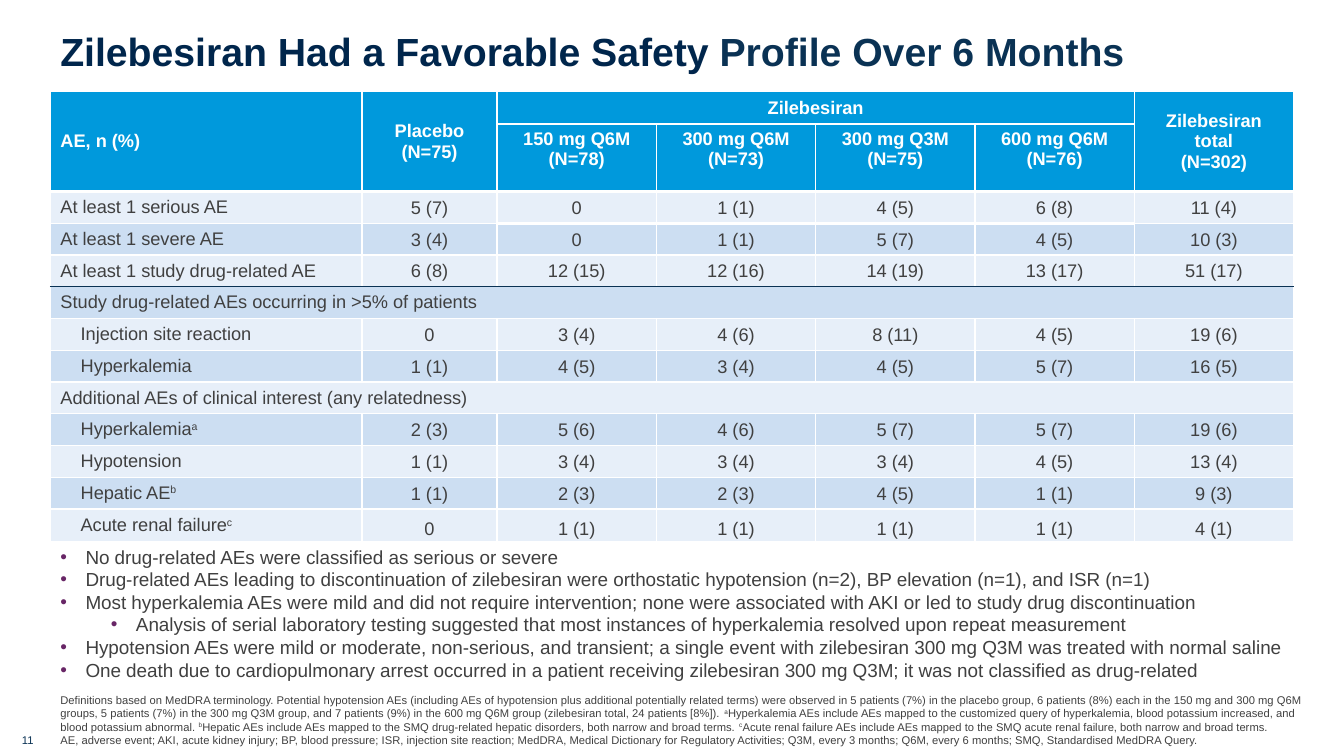
from dataclasses import dataclass, field
from typing import Any

from lxml import etree
from pptx import Presentation
from pptx.dml.color import RGBColor
from pptx.enum.text import MSO_ANCHOR, PP_ALIGN
from pptx.oxml.ns import qn
from pptx.util import Inches, Pt

TOP, MIDDLE, BOTTOM = MSO_ANCHOR.TOP, MSO_ANCHOR.MIDDLE, MSO_ANCHOR.BOTTOM
CENTER = PP_ALIGN.CENTER

NAVY, DARK_NAVY, GRAY, WHITE = "0A3254", "00264C", "404040", "FFFFFF"
HEADER_BLUE, PALE_BLUE, LIGHT_BLUE, PURPLE = "0099DC", "E7EFF9", "CCDEF2", "682666"
DOSE_COLUMNS = range(2, 6)
COLUMN_WIDTHS = [3.09, 1.34] + [1.58] * 5
HEADER_HEIGHTS = [0.32, 0.66]
ROW_HEIGHT = 0.315


@dataclass
class TextStyle:
    size: float
    color: str = GRAY
    bold: bool = False
    paragraph: dict[str, Any] = field(default_factory=dict)


@dataclass
class TextBlock:
    left: float
    top: float
    width: float
    height: float
    paragraphs: list[str]
    style: TextStyle
    anchor: Any = TOP
    bulleted: bool = False


@dataclass
class HeaderCell:
    row: int
    column: int
    lines: list[str]
    row_span: int = 1
    column_span: int = 1


@dataclass
class DataRow:
    label: str
    values: list[str] = field(default_factory=list)
    indented: bool = False


BODY = TextStyle(13)
HEADING = TextStyle(13, WHITE, True)
CENTERED_HEADING = TextStyle(13, WHITE, True, {"alignment": CENTER})
VALUE = TextStyle(13, paragraph={"alignment": CENTER, "line_spacing": 1.07,
                                 "space_after": Pt(1.4)})
LAST_VALUE = TextStyle(13, paragraph={"alignment": CENTER, "line_spacing": 1.5})
BULLET = TextStyle(13.5)

HEADER_CELLS = [
    HeaderCell(0, 0, ["AE, n (%)"], row_span=2),
    HeaderCell(0, 1, ["Placebo", "(N=75)"], row_span=2),
    HeaderCell(0, 2, ["Zilebesiran"], column_span=4),
    HeaderCell(0, 6, ["Zilebesiran", "total", "(N=302)"], row_span=2),
    HeaderCell(1, 2, ["150 mg Q6M (N=78)"]),
    HeaderCell(1, 3, ["300 mg Q6M (N=73)"]),
    HeaderCell(1, 4, ["300 mg Q3M", "(N=75)"]),
    HeaderCell(1, 5, ["600 mg Q6M (N=76)"]),
]

# Text between carets is superscript
DATA_ROWS = [
    DataRow("At least 1 serious AE", ["5 (7)", "0", "1 (1)", "4 (5)", "6 (8)", "11 (4)"]),
    DataRow("At least 1 severe AE", ["3 (4)", "0", "1 (1)", "5 (7)", "4 (5)", "10 (3)"]),
    DataRow("At least 1 study drug-related AE",
            ["6 (8)", "12 (15)", "12 (16)", "14 (19)", "13 (17)", "51 (17)"]),
    DataRow("Study drug-related AEs occurring in >5% of patients"),
    DataRow("Injection site reaction", ["0", "3 (4)", "4 (6)", "8 (11)", "4 (5)", "19 (6)"], True),
    DataRow("Hyperkalemia", ["1 (1)", "4 (5)", "3 (4)", "4 (5)", "5 (7)", "16 (5)"], True),
    DataRow("Additional AEs of clinical interest (any relatedness)"),
    DataRow("Hyperkalemia^a^", ["2 (3)", "5 (6)", "4 (6)", "5 (7)", "5 (7)", "19 (6)"], True),
    DataRow("Hypotension", ["1 (1)", "3 (4)", "3 (4)", "3 (4)", "4 (5)", "13 (4)"], True),
    DataRow("Hepatic AE^b^", ["1 (1)", "2 (3)", "2 (3)", "4 (5)", "1 (1)", "9 (3)"], True),
    DataRow("Acute renal failure^c^", ["0"] + ["1 (1)"] * 4 + ["4 (1)"], True),
]

TITLE = TextBlock(0.5, 0.22, 12.5, 1.2, ["Zilebesiran Had a Favorable Safety "],
                  TextStyle(28, DARK_NAVY, True))
TITLE_END = "Profile Over 6 Months"
TEXT_BLOCKS = [
    TextBlock(0.12, 7.22, 0.53, 0.24, ["11"], TextStyle(8, NAVY), MIDDLE),
    TextBlock(0.5, 7.06, 12.61, 0.4, [
        "Definitions based on MedDRA terminology. Potential hypotension AEs (including AEs of "
        "hypotension plus additional potentially related terms) were observed in 5 patients (7%) in "
        "the placebo group, 6 patients (8%) each in the 150 mg and 300 mg Q6M groups, 5 patients "
        "(7%) in the 300 mg Q3M group, and 7 patients (9%) in the 600 mg Q6M group (zilebesiran "
        "total, 24 patients [8%]). ^a^Hyperkalemia AEs include AEs mapped to the customized query of "
        "hyperkalemia, blood potassium increased, and blood potassium abnormal. ^b^Hepatic AEs "
        "include AEs mapped to the SMQ drug-related hepatic disorders, both narrow and broad terms. "
        "^c^Acute renal failure AEs include AEs mapped to the SMQ acute renal failure, both narrow "
        "and broad terms.",
        "AE, adverse event; AKI, acute kidney injury; BP, blood pressure; ISR, injection site "
        "reaction; MedDRA, Medical Dictionary for Regulatory Activities; Q3M, every 3 months; Q6M, "
        "every 6 months; SMQ, Standardised MedDRA Query."], TextStyle(8), BOTTOM),
    TextBlock(0.5, 5.36, 12.83, 0.81, [
        "No drug-related AEs were classified as serious or severe",
        "Drug-related AEs leading to discontinuation of zilebesiran were orthostatic hypotension "
        "(n=2), BP elevation (n=1), and ISR (n=1)",
        "Most hyperkalemia AEs were mild and did not require intervention; none were associated "
        "with AKI or led to study drug discontinuation"], BULLET, bulleted=True),
    TextBlock(0.5, 6.26, 12.83, 0.56, [
        "Hypotension AEs were mild or moderate, non-serious, and transient; a single event with "
        "zilebesiran 300 mg Q3M was treated with normal saline",
        "One death due to cardiopulmonary arrest occurred in a patient receiving zilebesiran 300 mg "
        "Q3M; it was not classified as drug-related"], BULLET, bulleted=True),
    TextBlock(1, 6.03, 12.15, 0.34, [
        "Analysis of serial laboratory testing suggested that most instances of hyperkalemia "
        "resolved upon repeat measurement"], BULLET, bulleted=True),
]


def rgb(value: str) -> RGBColor:
    return RGBColor.from_string(value)


def apply_format(target: Any, values: dict[str, Any]) -> None:
    for name, value in values.items():
        setattr(target, name, value)


def add_text(paragraph: Any, text: str, style: TextStyle) -> None:
    for index, part in enumerate(text.split("^")):
        if not part:
            continue
        run = paragraph.add_run()
        run.text = part
        apply_format(run.font, {"name": "Arial", "size": Pt(style.size), "bold": style.bold})
        run.font.color.rgb = rgb(style.color)
        if index % 2:
            run.font._element.set("baseline", "30000")


def add_bullet(paragraph: Any) -> None:
    properties = paragraph._p.get_or_add_pPr()
    properties.set("marL", str(Inches(0.25)))
    properties.set("indent", str(Inches(-0.25)))
    bullet_color = etree.SubElement(properties, qn("a:buClr"))
    etree.SubElement(bullet_color, qn("a:srgbClr"), val=PURPLE)
    etree.SubElement(properties, qn("a:buFont"), typeface="Arial")
    etree.SubElement(properties, qn("a:buChar"), char="•")


def fill_frame(frame: Any, lines: list[str], style: TextStyle, bulleted: bool = False) -> None:
    for index, line in enumerate(lines):
        paragraph = frame.add_paragraph() if index else frame.paragraphs[0]
        if bulleted:
            add_bullet(paragraph)
        apply_format(paragraph, style.paragraph)
        add_text(paragraph, line, style)


def add_block(slide: Any, block: TextBlock) -> Any:
    box = slide.shapes.add_textbox(*map(Inches, (block.left, block.top, block.width, block.height)))
    apply_format(box.text_frame, {"word_wrap": True, "vertical_anchor": block.anchor})
    fill_frame(box.text_frame, block.paragraphs, block.style, block.bulleted)
    return box


def bottom_edge(row: int, column: int) -> tuple[str, float]:
    in_dose = column in DOSE_COLUMNS
    if row == 4:
        return NAVY, 1
    if row == 1:
        return WHITE, 2.25 if in_dose else 3
    return WHITE, 2.25 if row == 2 and in_dose else 1


def style_cell(cell: Any, row: int, column: int) -> None:
    last_row = row + (cell.span_height - 1 if cell.is_merge_origin else 0)
    edges = {"a:lnL": (WHITE, 1), "a:lnR": (WHITE, 1),
             "a:lnT": bottom_edge(row - 1, column), "a:lnB": bottom_edge(last_row, column)}
    for tag, (color, width) in edges.items():
        line = etree.SubElement(cell._tc.get_or_add_tcPr(), qn(tag), w=str(Pt(width)))
        etree.SubElement(etree.SubElement(line, qn("a:solidFill")), qn("a:srgbClr"), val=color)
    cell.fill.solid()
    banding = PALE_BLUE if row % 2 == 0 else LIGHT_BLUE
    cell.fill.fore_color.rgb = rgb(HEADER_BLUE if row < 2 else banding)
    margin = Inches({0: 0.01, 1: 0.05}.get(row, 0.03))
    apply_format(cell, {"vertical_anchor": MIDDLE, "margin_top": margin, "margin_bottom": margin})


def add_safety_table(slide: Any) -> None:
    heights = HEADER_HEIGHTS + [ROW_HEIGHT] * len(DATA_ROWS)
    size = (sum(COLUMN_WIDTHS), sum(heights))
    table = slide.shapes.add_table(len(heights), len(COLUMN_WIDTHS),
                                   *map(Inches, (0.5, 0.91, *size))).table
    for column, width in zip(table.columns, COLUMN_WIDTHS):
        column.width = Inches(width)
    for row, height in zip(table.rows, heights):
        row.height = Inches(height)

    # Merged cells, then borders and fills
    for header in HEADER_CELLS:
        if header.row_span * header.column_span > 1:
            table.cell(header.row, header.column).merge(table.cell(
                header.row + header.row_span - 1, header.column + header.column_span - 1))
    last = len(heights) - 1
    for number, data in enumerate(DATA_ROWS, 2):
        if not data.values:
            table.cell(number, 0).merge(table.cell(number, len(COLUMN_WIDTHS) - 1))
    for number in range(len(heights)):
        for column in range(len(COLUMN_WIDTHS)):
            style_cell(table.cell(number, column), number, column)

    # Header wording
    for header in HEADER_CELLS:
        cell = table.cell(header.row, header.column)
        cell.vertical_anchor = TOP if header.row else MIDDLE
        fill_frame(cell.text_frame, header.lines, CENTERED_HEADING if header.column else HEADING)

    # Adverse event counts
    for number, data in enumerate(DATA_ROWS, 2):
        label = table.cell(number, 0)
        fill_frame(label.text_frame, [data.label], BODY)
        if data.indented:
            label.text_frame.paragraphs[0]._p.get_or_add_pPr().set("marL", str(Inches(0.2)))
        for column, value in enumerate(data.values, 1):
            cell = table.cell(number, column)
            if number == last:
                apply_format(cell, {"vertical_anchor": TOP, "margin_top": 0, "margin_bottom": 0})
            fill_frame(cell.text_frame, [value], LAST_VALUE if number == last else VALUE)


def main() -> None:
    presentation = Presentation()
    presentation.slide_width, presentation.slide_height = Inches(13.33), Inches(7.5)
    slide = presentation.slides.add_slide(presentation.slide_layouts[6])
    title = add_block(slide, TITLE)
    add_text(title.text_frame.paragraphs[0], TITLE_END, TextStyle(28, NAVY, True))
    add_safety_table(slide)
    for block in TEXT_BLOCKS:
        add_block(slide, block)
    presentation.save("out.pptx")


if __name__ == "__main__":
    main()
